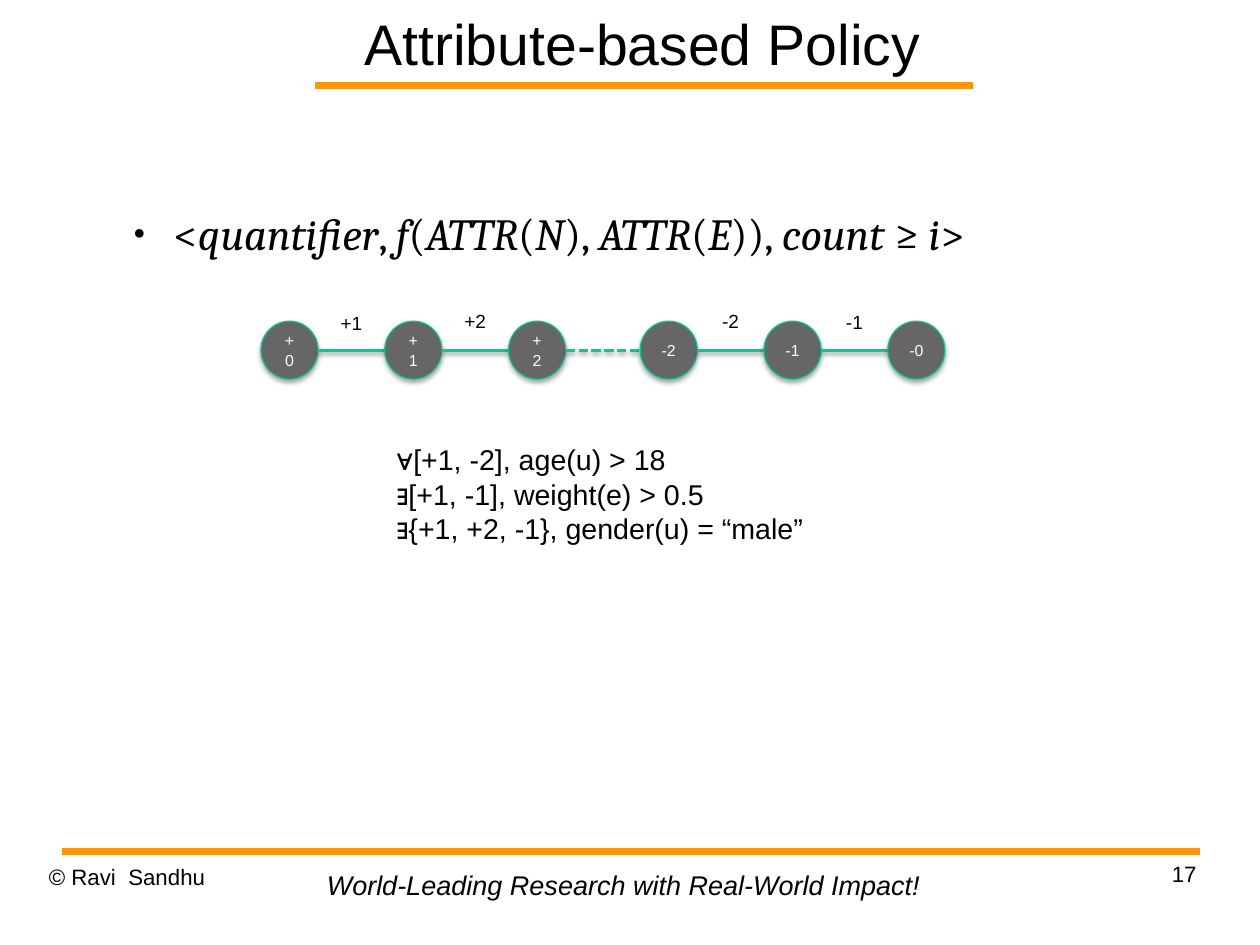
from lxml.etree import SubElement
from pptx import Presentation
from pptx.dml.color import RGBColor
from pptx.enum.dml import MSO_LINE
from pptx.enum.shapes import MSO_CONNECTOR, MSO_SHAPE
from pptx.enum.text import MSO_ANCHOR, PP_ALIGN
from pptx.oxml.ns import qn
from pptx.util import Pt

BLACK = RGBColor(0x00, 0x00, 0x00)
WHITE = RGBColor(0xFF, 0xFF, 0xFF)
ORANGE = RGBColor(0xFF, 0x95, 0x0E)
GRAY = RGBColor(0x66, 0x66, 0x66)
GREEN = RGBColor(0x00, 0xCC, 0x99)
NODE_GREEN = RGBColor(0x00, 0xC8, 0x96)


def set_effects(shape, blur=0, distance=0, opacity=0):
    """Give the shape a soft shadow below it, or none when opacity is zero."""
    effects = SubElement(shape._element.spPr, qn("a:effectLst"))
    if opacity:
        shadow = SubElement(effects, qn("a:outerShdw"), blurRad=str(Pt(blur)),
                            dist=str(Pt(distance)), dir="5400000", rotWithShape="0")
        color = SubElement(shadow, qn("a:srgbClr"), val="000000")
        SubElement(color, qn("a:alpha"), val=str(opacity * 1000))


def format_font(font, size, color=BLACK, name="Arial", italic=False):
    """Set the font of a run or paragraph."""
    font.name, font.size, font.italic = name, Pt(size), italic
    font.color.rgb = color


def add_text(slide, box, text, size, align=PP_ALIGN.LEFT, inset=True, italic=False):
    """Add a text box with one paragraph per line and return its frame."""
    frame = slide.shapes.add_textbox(*map(Pt, box)).text_frame
    frame.word_wrap = True
    if not inset:
        frame.margin_left = frame.margin_right = 0
        frame.margin_top = frame.margin_bottom = 0
    frame.text = text
    for paragraph in frame.paragraphs:
        paragraph.alignment = align
        for run in paragraph.runs:
            format_font(run.font, size, italic=italic)
    return frame


def add_line(slide, left, right, y, color, width):
    """Add a horizontal line."""
    line = slide.shapes.add_connector(MSO_CONNECTOR.STRAIGHT, Pt(left), Pt(y), Pt(right), Pt(y))
    line.line.color.rgb = color
    line.line.width = Pt(width)
    return line


def add_title(slide, left, top, width, height):
    """Add the title with its orange rule."""
    frame = add_text(slide, (left, top, width, height), "Attribute-based Policy", 36,
                     PP_ALIGN.CENTER, inset=False)
    frame.vertical_anchor = MSO_ANCHOR.MIDDLE
    rule = add_line(slide, left + 25.5, left + 439.5, top + height, ORANGE, 4.31)
    set_effects(rule)


def add_footer(slide, left, top, width):
    """Add the footer rule, copyright, motto and page number."""
    set_effects(add_line(slide, left + 8.5, left + width + 2, top, ORANGE, 4.31))
    add_text(slide, (left, top + 7.5, 185, 41), "© Ravi  Sandhu", 14, inset=False)
    add_text(slide, (left + width - 185, top + 6.1, 185, 41), "17", 14,
             PP_ALIGN.RIGHT, inset=False)
    motto = add_text(slide, (left + 168, top + 7.2, 391.7, 28),
                     "World-Leading Research with Real-World Impact!", 17, italic=True)
    motto.word_wrap = False


def add_policy_form(slide, left, top, width, height):
    """Add the bulleted policy expression, with its names in italics."""
    frame = add_text(slide, (left, top, width, height), "", 28)
    paragraph = frame.paragraphs[0]
    properties = paragraph._p.get_or_add_pPr()
    properties.set("marL", str(Pt(33.8)))
    properties.set("indent", str(Pt(-25.2)))
    bullet_color = SubElement(properties, qn("a:buClr"))
    SubElement(bullet_color, qn("a:srgbClr"), val="000000")
    SubElement(properties, qn("a:buSzPct"), val="45000")
    SubElement(properties, qn("a:buFont"), typeface="Arial")
    SubElement(properties, qn("a:buChar"), char="●")
    parts = ("<", "quantifier", ", ", "f", "(", "ATTR", "(", "N", "), ", "ATTR",
             "(", "E", ")), ", "count", " ≥ ", "i", ">")
    for index, part in enumerate(parts):
        run = paragraph.add_run()
        run.text = part
        format_font(run.font, 28, name="Cambria", italic=index % 2 == 1)


def add_node(slide, left, top, size, label):
    """Add one round path node."""
    node = slide.shapes.add_shape(MSO_SHAPE.OVAL, Pt(left), Pt(top), Pt(size), Pt(size + 0.5))
    node.fill.solid()
    node.fill.fore_color.rgb = GRAY
    node.line.color.rgb = NODE_GREEN
    node.line.width = Pt(0.75)
    set_effects(node, 3.1, 1.8, 35)
    frame = node.text_frame
    frame.word_wrap = True
    frame.vertical_anchor = MSO_ANCHOR.MIDDLE
    frame.text = label
    frame.paragraphs[0].alignment = PP_ALIGN.CENTER
    format_font(frame.paragraphs[0].runs[0].font, 10, WHITE)


def add_path(slide, left, top):
    """Add the chain of nodes, its links and the link labels."""
    size, step, dashed_step = 36, 78, 82.9
    labels = ("+0", "+1", "+2", "-2", "-1", "-0")
    link_labels = (("+1", -9.4), ("+2", -11), None, ("-2", -11), ("-1", -10.1))
    for index, label in enumerate(labels):
        node_left = left + index * step + (dashed_step - step if index > 2 else 0)
        add_node(slide, node_left, top, size, label)
        if index == len(link_labels):
            break
        link_label = link_labels[index]
        gap = (step if link_label else dashed_step) - size
        start = node_left + size
        link = add_line(slide, start, start + gap, top + size / 2 + 0.25, GREEN, 2)
        if link_label:
            text, offset = link_label
            add_text(slide, (start, top + offset, gap, 21.6), text, 12, PP_ALIGN.CENTER)
        else:
            link.line.dash_style = MSO_LINE.SQUARE_DOT
        set_effects(link, 3.1, 1.6, 38)


def add_examples(slide, left, top, width, height):
    """Add the three example policies."""
    add_text(slide, (left, top, width, height),
             "∀[+1, -2], age(u) > 18\n∃[+1, -1], weight(e) > 0.5\n"
             "∃{+1, +2, -1}, gender(u) = “male”", 18)


def main():
    """Build the slide and save it."""
    presentation = Presentation()
    presentation.slide_width, presentation.slide_height = Pt(793.75), Pt(595.25)
    slide = presentation.slides.add_slide(presentation.slide_layouts[6])
    add_title(slide, 173.2, 0, 463, 54)
    add_footer(slide, 30.8, 536.1, 723)
    add_policy_form(slide, 68.4, 126, 648, 356.4)
    add_path(slide, 164.4, 202.3)
    add_examples(slide, 242.6, 275, 275, 72.7)
    presentation.save("out.pptx")


if __name__ == "__main__":
    main()
